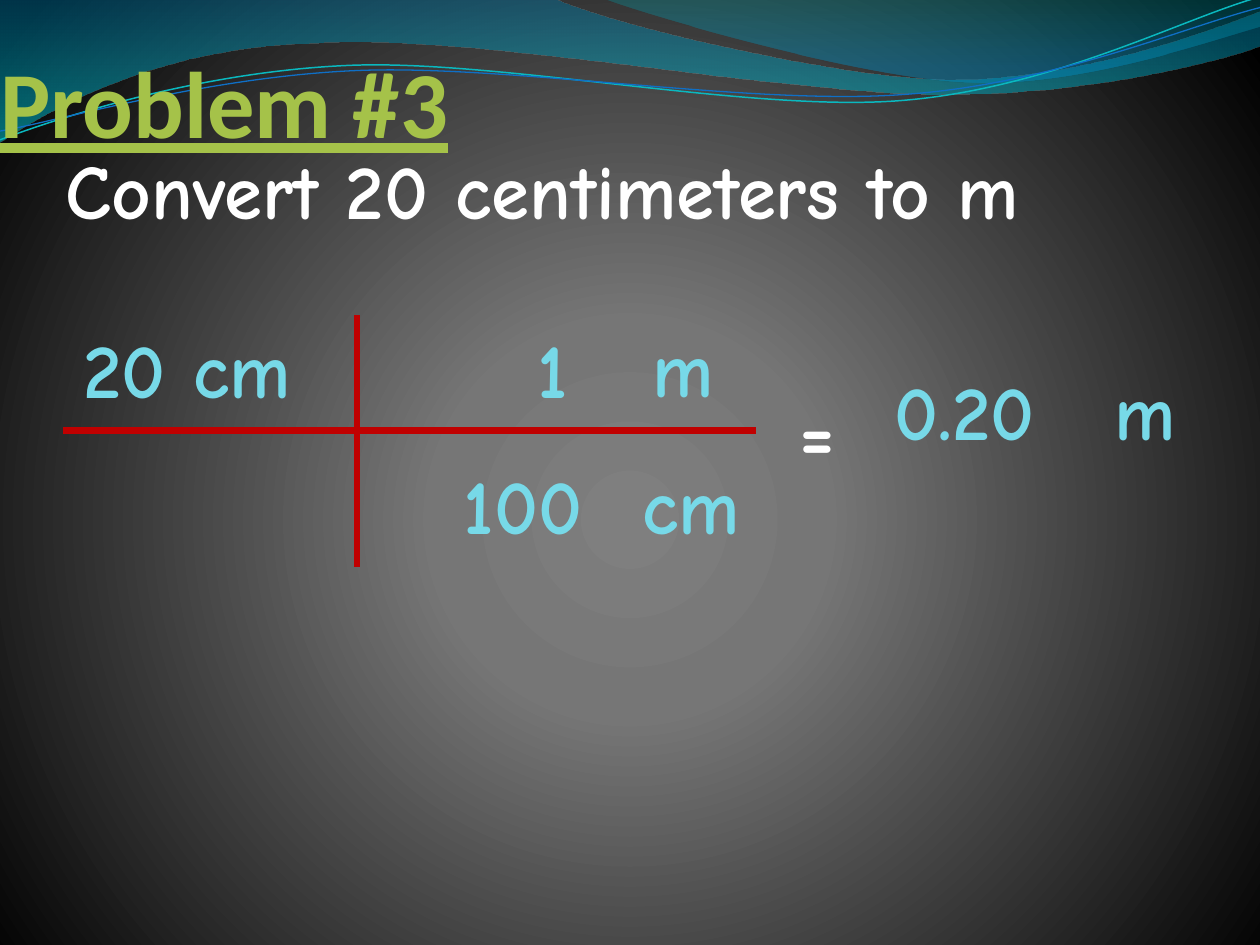
"""Builds the unit conversion slide "Problem #3"."""
from lxml.etree import SubElement
from pptx import Presentation
from pptx.dml.color import RGBColor
from pptx.enum.shapes import MSO_CONNECTOR
from pptx.enum.text import MSO_ANCHOR, MSO_AUTO_SIZE, PP_ALIGN
from pptx.oxml import parse_xml
from pptx.oxml.ns import nsdecls, qn
from pptx.util import Pt

WHITE = RGBColor(0xFF, 0xFF, 0xFF)
GREEN = RGBColor(0xA5, 0xC2, 0x49)
AQUA = RGBColor(0x77, 0xD9, 0xE8)
RED = RGBColor(0xC0, 0x00, 0x00)
TEAL = RGBColor(0x0A, 0xB8, 0xBF)
BLUE = RGBColor(0x0F, 0x6F, 0xC6)

TITLE = "Problem #3"
TEXT_HEIGHT = 60.5
TEXTS = [
    ("Convert 20 centimeters to m", 30.2, 78, 640, WHITE, False),
    ("20 cm", 40.5, 180, 145.5, AQUA, False),
    ("=", 450, 216, 42, WHITE, False),
    ("m", 630, 204, 90, AQUA, True),
    ("cm", 360, 258, 72.5, AQUA, False),
    ("m", 366, 179.5, 84, AQUA, True),
    ("100", 258, 258, 96, AQUA, False),
    ("1", 300, 180, 42, AQUA, False),
    ("0.20", 504, 204, 115, AQUA, False),
]
RULES = [(36, 246, 432, 246, 4.5), (204, 180, 204, 324, 3)]

BACKDROP_STOPS = [(0, "7F7F7F", 100), (25, "767676", 100), (100, "000000", 100)]
BACKDROP_SHADE = ('<a:path path="circle"><a:fillToRect l="10000" t="110000" '
                  'r="10000" b="100000"/></a:path>')
WAVE_SHADE = '<a:lin ang="5400000" scaled="1"/>'
WAVES = [
    ([(0, 0), (316.8, -0.7), (342.7, 12.2, 478.1, 45.4, 545.8, 45.4),
      (614.2, 45.4, 689.8, 18.7, 720, 6.5), (720.7, 25.9),
      (707.8, 31.7, 626.4, 54.7, 537.1, 54), (447.8, 54, 275, 20.2, 185, 24.5),
      (92.9, 25.9, 33.1, 59.8, -0.7, 81.4)],
     [(0, "0074A1", 45), (100, "00C6CF", 55)]),
    ([(344.9, -0.7), (366.5, 7.9, 491, 44.6, 553.7, 46.8),
      (616.3, 49.7, 691.9, 23, 720, 15.1), (720, 0)],
     [(0, "00A1A9", 30), (80, "008BBF", 45)]),
]
STRANDS = [
    ([(0, 79.9), (34.6, 67, 113.8, 41, 199.4, 37.4),
      (284.4, 33.8, 427, 64.1, 513.4, 57.6),
      (599.8, 51.1, 675.4, 10.8, 718.6, -1.4)], TEAL, 0.85),
    ([(0, 74.9), (33.8, 69.1, 118.1, 43.9, 203.8, 40.3),
      (290.2, 36.7, 429.8, 60.5, 516.2, 54),
      (601.9, 48.2, 677.5, 15.1, 720, 4.3)], BLUE, 0.75),
]
FIRST_MASTER_ID = 20


def set_gradient(fill, element, stops, shade):
    fill.gradient()
    stop_list = "".join(
        f'<a:gs pos="{place * 1000}"><a:srgbClr val="{color}">'
        f'<a:alpha val="{alpha * 1000}"/></a:srgbClr></a:gs>'
        for place, color, alpha in stops)
    gradient = element.find(".//" + qn("a:gradFill"))
    gradient.getparent().replace(gradient, parse_xml(
        f'<a:gradFill {nsdecls("a")} rotWithShape="1">'
        f'<a:gsLst>{stop_list}</a:gsLst>{shade}</a:gradFill>'))


def add_outline(slide, segments, close):
    start, *ends = [(Pt(s[-2]), Pt(s[-1])) for s in segments]
    builder = slide.shapes.build_freeform(*start)
    builder.add_line_segments(ends, close=close)
    outline = builder.convert_to_shape()
    outline.shadow.inherit = False
    edges = list(outline._element.iter(qn("a:lnTo")))
    for edge, segment in zip(edges, segments[1:]):
        if len(segment) == 6:
            points = "".join(
                f'<a:pt x="{Pt(x) - outline.left}" y="{Pt(y) - outline.top}"/>'
                for x, y in zip(segment[::2], segment[1::2]))
            edge.getparent().replace(edge, parse_xml(
                f'<a:cubicBezTo {nsdecls("a")}>{points}</a:cubicBezTo>'))
    return outline


def style(paragraph, font_name, size, color):
    font = paragraph.font
    font.name, font.size, font.bold = font_name, Pt(size), True
    font.color.rgb = color
    paragraph.alignment = PP_ALIGN.LEFT


def add_backdrop(slide, master):
    set_gradient(slide.background.fill, slide._element, BACKDROP_STOPS, BACKDROP_SHADE)
    decorations = []
    for segments, stops in WAVES:
        wave = add_outline(slide, segments, True)
        set_gradient(wave.fill, wave._element.spPr, stops, WAVE_SHADE)
        wave.line.fill.background()
        decorations.append(wave)
    for segments, color, width in STRANDS:
        strand = add_outline(slide, segments, False)
        strand.fill.background()
        strand.line.color.rgb = color
        strand.line.width = Pt(width)
        decorations.append(strand)
    for number, decoration in enumerate(decorations, FIRST_MASTER_ID):
        decoration._element.nvSpPr.cNvPr.set("id", str(number))
        master.shapes._spTree.append(decoration._element)


def add_title(slide):
    title = slide.shapes.title
    title.left, title.top, title.width, title.height = Pt(0), Pt(0), Pt(648), Pt(90)
    frame = title.text_frame
    frame.text = TITLE
    frame.auto_size = MSO_AUTO_SIZE.NONE
    frame.vertical_anchor = MSO_ANCHOR.BOTTOM
    frame.margin_left = frame.margin_right = frame.margin_bottom = Pt(0)
    frame.margin_top = Pt(3.6)
    style(frame.paragraphs[0], "Calibri", 54, GREEN)
    frame.paragraphs[0].font.underline = True


def add_conversion(slide):
    for x1, y1, x2, y2, width in RULES:
        rule = slide.shapes.add_connector(
            MSO_CONNECTOR.STRAIGHT, Pt(x1), Pt(y1), Pt(x2), Pt(y2))
        rule.line.color.rgb = RED
        rule.line.width = Pt(width)
        SubElement(rule._element.spPr, qn("a:effectLst"))
    for text, left, top, width, color, wraps in TEXTS:
        frame = slide.shapes.add_textbox(
            Pt(left), Pt(top), Pt(width), Pt(TEXT_HEIGHT)).text_frame
        frame.text = text
        frame.word_wrap = wraps
        frame.auto_size = MSO_AUTO_SIZE.SHAPE_TO_FIT_TEXT
        style(frame.paragraphs[0], "Comic Neue", 44, color)


def main():
    deck = Presentation()
    deck.slide_width, deck.slide_height = Pt(720), Pt(540)
    slide = deck.slides.add_slide(deck.slide_layouts[5])
    add_backdrop(slide, deck.slide_master)
    add_title(slide)
    add_conversion(slide)
    deck.save("out.pptx")


if __name__ == "__main__":
    main()
